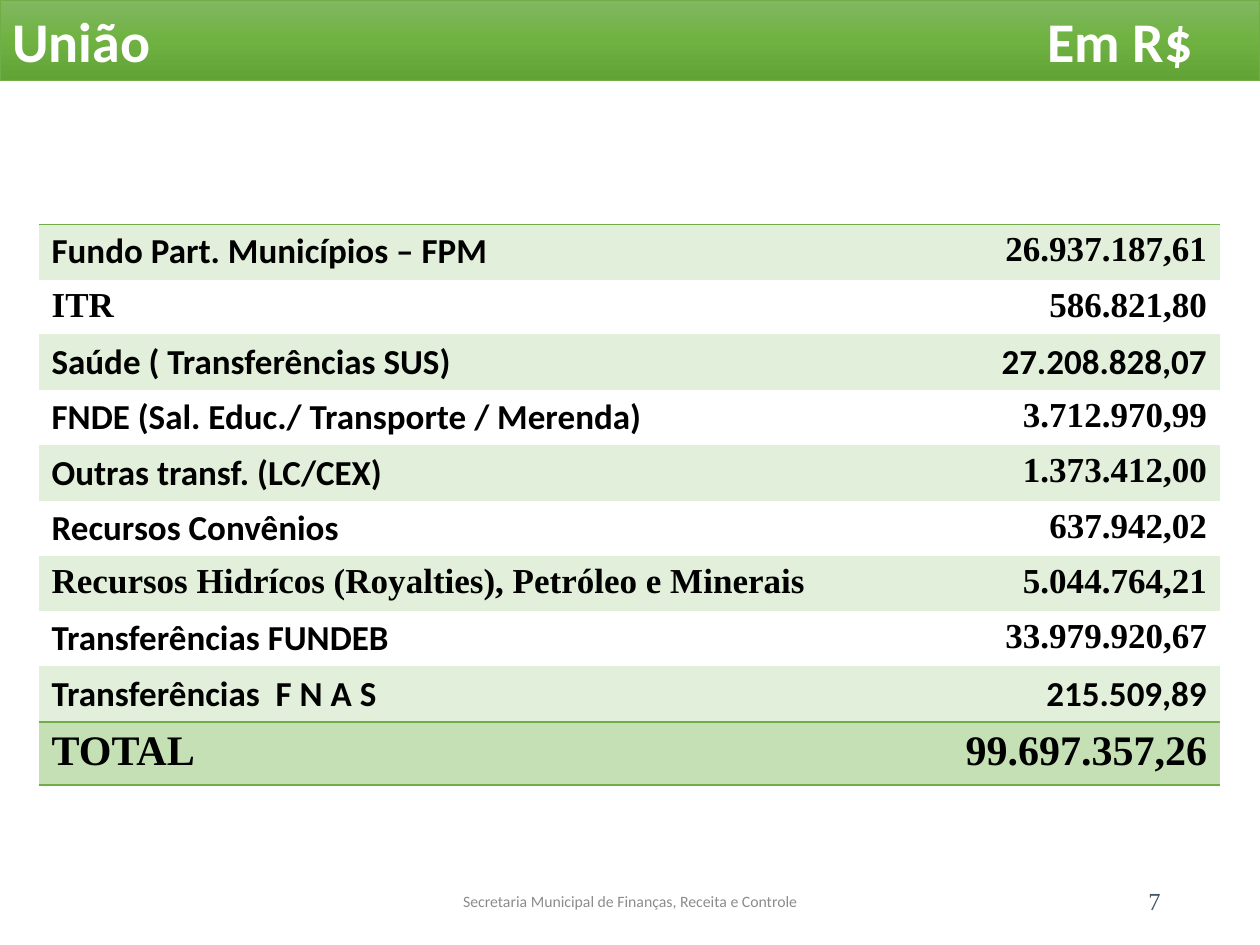
from dataclasses import dataclass

from lxml import etree
from pptx import Presentation
from pptx.dml.color import RGBColor
from pptx.enum.shapes import MSO_SHAPE
from pptx.enum.text import MSO_ANCHOR, PP_ALIGN
from pptx.oxml.ns import qn
from pptx.util import Inches, Pt

RECTANGLE = MSO_SHAPE.RECTANGLE
TOP, MIDDLE = MSO_ANCHOR.TOP, MSO_ANCHOR.MIDDLE
LEFT, CENTER, RIGHT = PP_ALIGN.LEFT, PP_ALIGN.CENTER, PP_ALIGN.RIGHT


@dataclass(frozen=True)
class Theme:
    sans: str = "Calibri"
    serif: str = "Times New Roman"
    green: str = "70AD47"
    band: str = "E2EFDA"
    total: str = "C5E0B4"
    gradient: tuple = ((0, "81B861"), (50, "6FB242"), (100, "62A336"))
    white: str = "FFFFFF"
    black: str = "000000"
    gray: str = "8C8C8C"
    navy: str = "44546A"
    title_size: int = 32
    total_size: int = 24
    row_size: int = 20
    number_size: int = 14
    footer_size: int = 9


THEME = Theme()
NO_STYLE = "{2D5ABB26-0587-4C30-8999-92F81FD0307C}"

TRANSFERS = (
    ("Fundo Part. Municípios – FPM", THEME.sans, "26.937.187,61", THEME.serif),
    ("ITR", THEME.serif, "586.821,80", THEME.serif),
    ("Saúde ( Transferências SUS)", THEME.sans, "27.208.828,07", THEME.sans),
    ("FNDE (Sal. Educ./ Transporte / Merenda)", THEME.sans, "3.712.970,99", THEME.serif),
    ("Outras transf. (LC/CEX)", THEME.sans, "1.373.412,00", THEME.serif),
    ("Recursos Convênios", THEME.sans, "637.942,02", THEME.serif),
    ("Recursos Hidrícos (Royalties), Petróleo e Minerais", THEME.serif, "5.044.764,21", THEME.serif),
    ("Transferências FUNDEB", THEME.sans, "33.979.920,67", THEME.serif),
    ("Transferências  F N A S", THEME.sans, "215.509,89", THEME.sans),
    ("TOTAL", THEME.serif, "99.697.357,26", THEME.serif),
)


def write(frame, text, *, size, color, font=THEME.sans, bold=False, align=LEFT, tab=None):
    para = frame.paragraphs[0]
    para.alignment = align
    if tab is not None:
        stops = etree.SubElement(para._p.get_or_add_pPr(), qn("a:tabLst"))
        etree.SubElement(stops, qn("a:tab"), pos=str(tab), algn="r")
    span = para.add_run()
    span.text = text
    span.font.name = font
    span.font.size = Pt(size)
    span.font.bold = bold
    span.font.color.rgb = RGBColor.from_string(color)


def fill_gradient(shape, stops):
    shape.fill.gradient()
    shape.fill.gradient_angle = 270
    stop_list = shape._element.spPr.find(qn("a:gradFill")).find(qn("a:gsLst"))
    stop_list.clear()
    for percent, color in stops:
        stop = etree.SubElement(stop_list, qn("a:gs"), pos=str(percent * 1000))
        etree.SubElement(stop, qn("a:srgbClr"), val=color)


def add_border(cell, edge):
    line = etree.SubElement(cell._tc.get_or_add_tcPr(), qn(f"a:{edge}"), w=str(Pt(1)))
    fill = etree.SubElement(line, qn("a:solidFill"))
    etree.SubElement(fill, qn("a:srgbClr"), val=THEME.green)


def add_header(page, left, top, width, height):
    banner = page.shapes.add_shape(RECTANGLE, left, top, width, height)
    banner.shadow.inherit = False
    fill_gradient(banner, THEME.gradient)
    banner.line.color.rgb = RGBColor.from_string(THEME.green)
    banner.line.width = Pt(0.5)
    frame = banner.text_frame
    frame.word_wrap = True
    frame.vertical_anchor = TOP
    write(frame, "União\tEm R$", size=THEME.title_size, color=THEME.white,
          bold=True, tab=width - Inches(0.63))


def add_transfers(page, left, top, width, height):
    last = len(TRANSFERS) - 1
    table = page.shapes.add_table(len(TRANSFERS), 2, left, top, width, height).table
    table.first_row = table.horz_banding = False
    table._tbl.tblPr.find(qn("a:tableStyleId")).text = NO_STYLE
    amount_width = Inches(2.32)
    table.columns[0].width = width - amount_width
    table.columns[1].width = amount_width
    total_height = Inches(0.5)
    for index, (label, label_font, amount, amount_font) in enumerate(TRANSFERS):
        is_total = index == last
        table.rows[index].height = total_height if is_total else (height - total_height) // last
        edges = ("lnT", "lnB") if is_total else ("lnT",) if index == 0 else ()
        columns = ((label, label_font, LEFT), (amount, amount_font, RIGHT))
        for column, (text, font, align) in enumerate(columns):
            cell = table.cell(index, column)
            for edge in edges:
                add_border(cell, edge)
            if is_total or index % 2 == 0:
                cell.fill.solid()
                cell.fill.fore_color.rgb = RGBColor.from_string(THEME.total if is_total else THEME.band)
            else:
                cell.fill.background()
            write(cell.text_frame, text, font=font, align=align, bold=True, color=THEME.black,
                  size=THEME.total_size if is_total else THEME.row_size)


def add_note(page, left, top, width, height, text, **style):
    frame = page.shapes.add_textbox(left, top, width, height).text_frame
    frame.word_wrap = True
    frame.vertical_anchor = MIDDLE
    write(frame, text, **style)


def add_footer(page, left, top, width, height):
    note_width = Inches(3.38)
    add_note(page, left + (width - note_width) // 2, top, note_width, height,
             "Secretaria Municipal de Finanças, Receita e Controle",
             size=THEME.footer_size, color=THEME.gray, align=CENTER)
    number_width = Inches(2.25)
    add_note(page, left + width - number_width, top, number_width, height, "7",
             size=THEME.number_size, color=THEME.navy, font=THEME.serif, align=RIGHT)


def main():
    deck = Presentation()
    deck.slide_width = Inches(10)
    deck.slide_height = Inches(7.5)
    page = deck.slides.add_slide(deck.slide_layouts[6])
    add_header(page, 0, 0, deck.slide_width, Inches(0.64))
    add_transfers(page, Inches(0.31), Inches(1.78), Inches(9.37), Inches(4.4))
    add_footer(page, Inches(0.69), Inches(6.95), Inches(8.62), Inches(0.4))
    deck.save("out.pptx")


if __name__ == "__main__":
    main()
